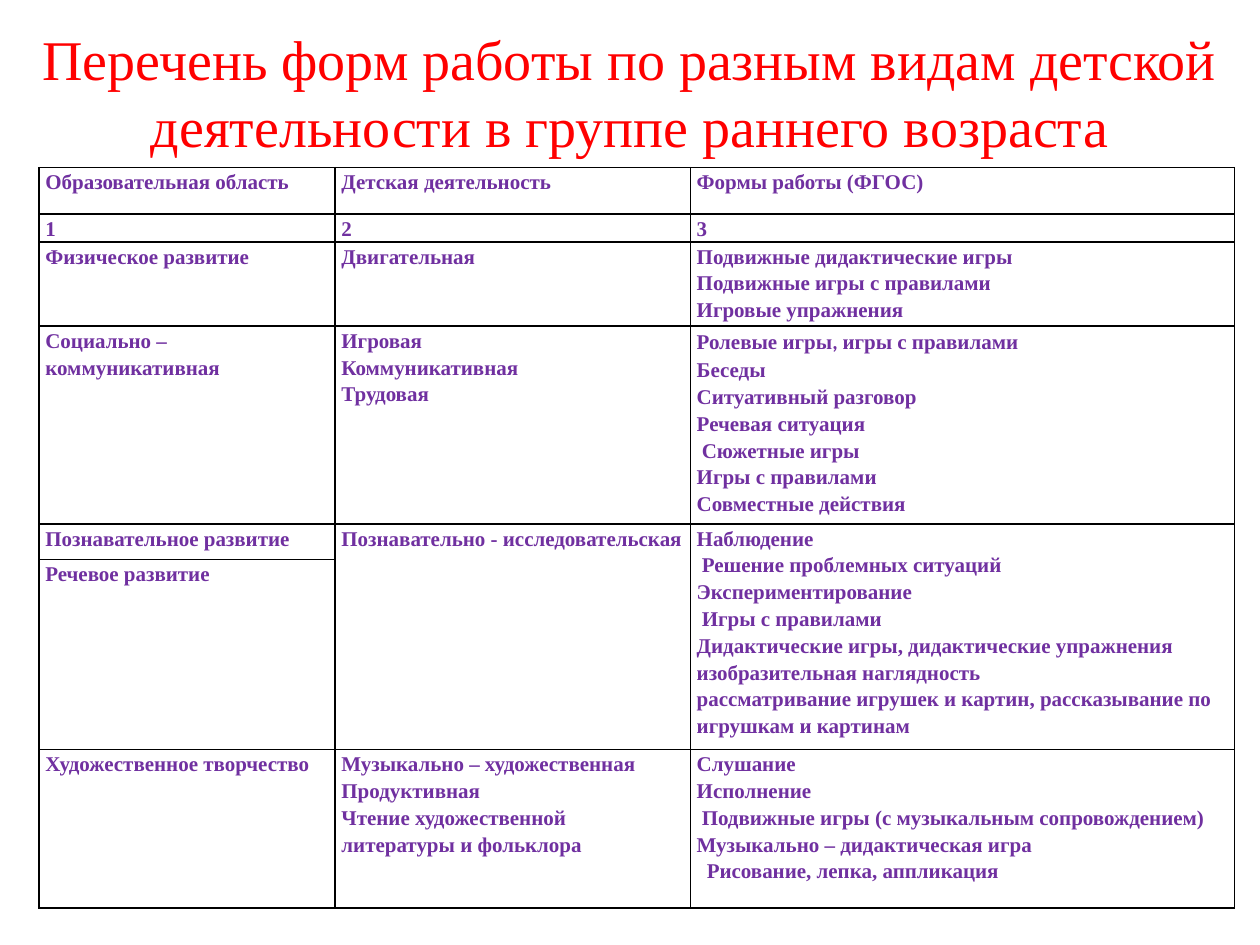
from dataclasses import dataclass

from lxml import etree
from pptx import Presentation
from pptx.dml.color import RGBColor
from pptx.enum.text import MSO_ANCHOR, PP_ALIGN
from pptx.oxml.ns import qn
from pptx.util import Inches, Pt

CENTER = PP_ALIGN.CENTER
MIDDLE = MSO_ANCHOR.MIDDLE


@dataclass(frozen=True)
class Theme:
    face: str = "Times New Roman"
    alt: str = "Calibri"
    head: str = "FF0000"
    body: str = "7030A0"
    rule: str = "000000"
    big: int = 32
    small: int = 12
    space: float = 1.15
    edge: int = 1
    pad: float = 0.05
    step: float = 0.04


TITLE = ("Перечень форм работы по разным видам детской "
         "деятельности в группе раннего возраста")
COLS = [2.35, 2.82, 4.32]
ROWS = [0.37, 0.22, 0.67, 1.57, 0.28, 1.51, 1.26]

# Each ">" at the start of a line is one indent step;
# "|" switches between the main and the alternate typeface.
CELLS = [
    ["Образовательная область", "Детская деятельность", "Формы работы (ФГОС)"],
    ["1", "2", "3"],
    ["Физическое развитие", "Двигательная",
     "Подвижные дидактические игры\n"
     "Подвижные игры с правилами\n"
     "Игровые упражнения"],
    ["Социально – коммуникативная",
     "Игровая\nКоммуникативная\nТрудовая",
     "Ролевые игры|, |игры с правилами\n"
     "Беседы\n"
     "Ситуативный разговор\n"
     "Речевая ситуация\n"
     ">Сюжетные игры\n"
     "Игры с правилами\n"
     "Совместные действия"],
    ["Познавательное развитие", "Познавательно - исследовательская",
     "Наблюдение\n"
     ">Решение проблемных ситуаций\n"
     "Экспериментирование\n"
     ">Игры с правилами\n"
     "Дидактические игры, дидактические упражнения\n"
     "изобразительная наглядность\n"
     "рассматривание игрушек и картин, рассказывание по игрушкам и картинам"],
    ["Речевое развитие", None, None],
    ["Художественное творчество",
     "Музыкально – художественная\n"
     "Продуктивная\n"
     "Чтение художественной литературы и фольклора",
     "Слушание\n"
     "Исполнение\n"
     ">Подвижные игры (с музыкальным сопровождением)\n"
     "Музыкально – дидактическая игра\n"
     ">>Рисование, лепка, аппликация"],
]


class Page:
    def __init__(self, slide, theme):
        self.slide = slide
        self.theme = theme

    def style(self, font, size, color, bold=False):
        font.name = self.theme.face
        font.size = Pt(size)
        font.bold = bold
        font.color.rgb = RGBColor.from_string(color)

    def title(self, text, left, top, width, height):
        box = self.slide.shapes.add_textbox(
            Inches(left), Inches(top), Inches(width), Inches(height))
        frame = box.text_frame
        frame.word_wrap = True
        frame.vertical_anchor = MIDDLE
        para = frame.paragraphs[0]
        para.text = text
        para.alignment = CENTER
        self.style(para.font, self.theme.big, self.theme.head)

    def border(self, cell):
        props = cell._tc.get_or_add_tcPr()
        for side in ("lnL", "lnR", "lnT", "lnB"):
            line = etree.SubElement(props, qn("a:" + side),
                                    w=str(Pt(self.theme.edge)))
            fill = etree.SubElement(line, qn("a:solidFill"))
            etree.SubElement(fill, qn("a:srgbClr"), val=self.theme.rule)

    def line(self, para, mark):
        """Set one line of cell text from its indent and typeface marks."""
        text = mark.lstrip(">")
        depth = len(mark) - len(text)
        if depth:
            para._p.get_or_add_pPr().set(
                "marL", str(Inches(depth * self.theme.step)))
        para.line_spacing = self.theme.space
        self.style(para.font, self.theme.small, self.theme.body, True)
        for i, part in enumerate(text.split("|")):
            run = para.add_run()
            run.text = part
            if i % 2:
                run.font.name = self.theme.alt

    def fill(self, cell, text):
        cell.margin_left = cell.margin_right = Inches(self.theme.pad)
        cell.margin_top = cell.margin_bottom = 0
        self.border(cell)
        cell.fill.background()
        frame = cell.text_frame
        for i, mark in enumerate((text or "").split("\n")):
            para = frame.add_paragraph() if i else frame.paragraphs[0]
            self.line(para, mark)

    def table(self, left, top, cols, rows, cells, spans):
        """Each span is a pair of (row, column) corners to merge."""
        table = self.slide.shapes.add_table(
            len(rows), len(cols), Inches(left), Inches(top),
            Inches(sum(cols)), Inches(sum(rows))).table
        table.first_row = table.horz_banding = False
        for col, width in zip(table.columns, cols):
            col.width = Inches(width)
        for row, height, texts in zip(table.rows, rows, cells):
            row.height = Inches(height)
            for cell, text in zip(row.cells, texts):
                self.fill(cell, text)
        for start, end in spans:
            table.cell(*start).merge(table.cell(*end))


def main():
    deck = Presentation()
    deck.slide_width = Inches(10)
    deck.slide_height = Inches(7.5)
    page = Page(deck.slides.add_slide(deck.slide_layouts[6]), Theme())
    page.table(0.31, 1.33, COLS, ROWS, CELLS,
               [((4, col), (5, col)) for col in (1, 2)])
    page.title(TITLE, 0, 0.13, 10, 1.2)
    deck.save("out.pptx")


if __name__ == "__main__":
    main()
